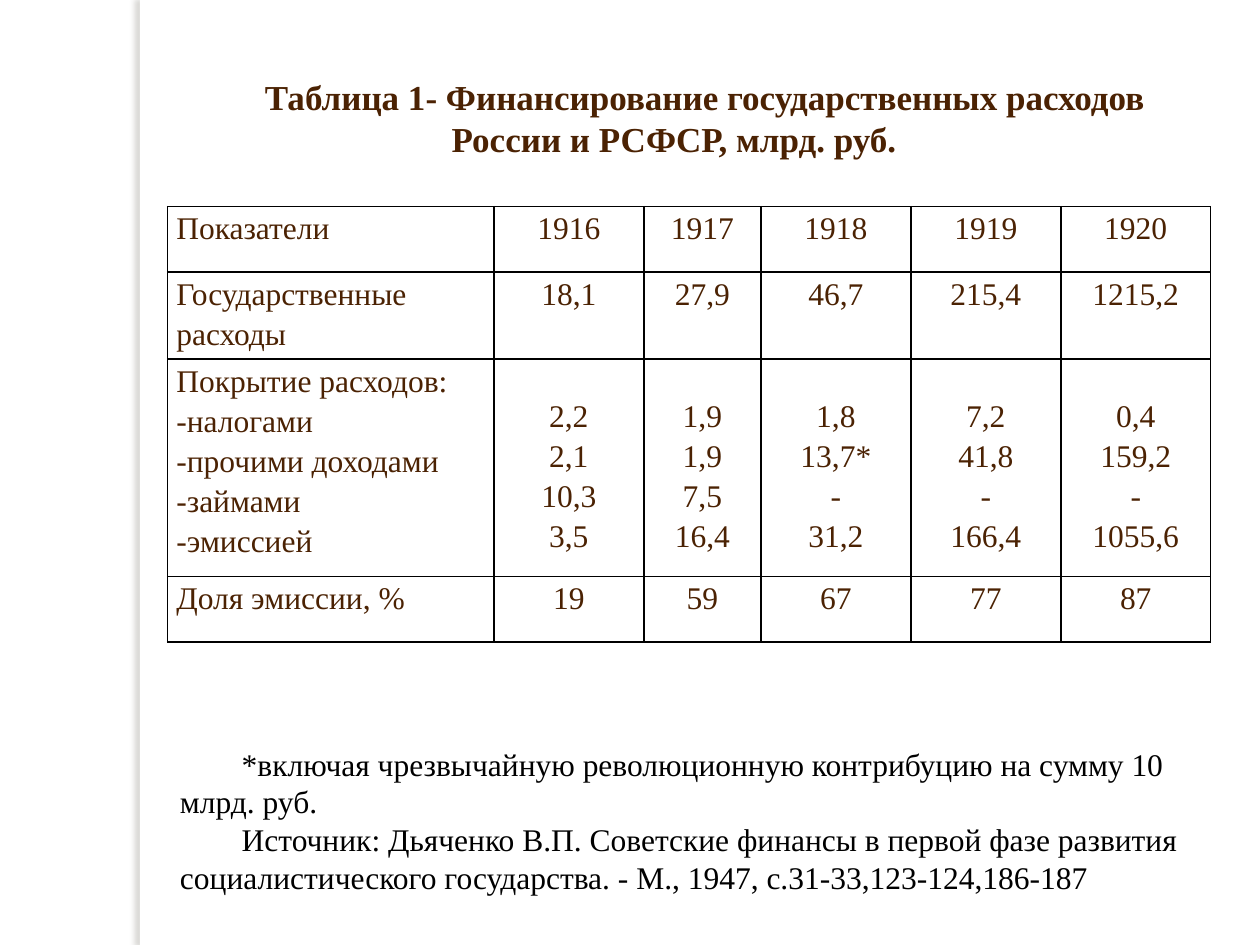
from lxml.etree import SubElement
from pptx import Presentation
from pptx.dml.color import RGBColor
from pptx.enum.shapes import MSO_SHAPE as Shape
from pptx.enum.text import MSO_ANCHOR as Anchor, MSO_AUTO_SIZE as AutoSize, PP_ALIGN as Align
from pptx.oxml import parse_xml
from pptx.oxml.ns import nsdecls, qn
from pptx.util import Inches, Pt

TITLE = "Таблица 1- Финансирование государственных расходов России и РСФСР, млрд. руб."
ROWS = [
    ["Показатели", "1916", "1917", "1918", "1919", "1920"],
    ["Государственные расходы", "18,1", "27,9", "46,7", "215,4", "1215,2"],
    [
        "Покрытие расходов:\n-налогами\n-прочими доходами\n-займами\n-эмиссией",
        "2,2\n2,1\n10,3\n3,5",
        "1,9\n1,9\n7,5\n16,4",
        "1,8\n13,7*\n-\n31,2",
        "7,2\n41,8\n-\n166,4",
        "0,4\n159,2\n-\n1055,6",
    ],
    ["Доля эмиссии, %", "19", "59", "67", "77", "87"],
]
NOTES = [
    "*включая чрезвычайную революционную контрибуцию на сумму 10 млрд. руб.",
    "Источник: Дьяченко В.П. Советские финансы в первой фазе развития "
    "социалистического государства. - М., 1947, с.31-33,123-124,186-187",
]
COLUMN_WIDTHS = [2.59, 1.19, 0.93, 1.19, 1.19, 1.19]
ROW_HEIGHTS = [0.52, 0.52, 1.63, 0.52]
COVERAGE_ROW = 2
FIRST_LINE_GAP = 0.28
FONT, BROWN, BLACK, WHITE = "Times New Roman", "4B2203", "000000", "FFFFFF"


def paint(fill, color):
    fill.solid()
    fill.fore_color.rgb = RGBColor.from_string(color)


def write(frame, lines, size, color, align=Align.LEFT, bold=False, spacing=None, indent=0):
    frame.text = "\n".join(lines)
    frame.word_wrap = True
    for para in frame.paragraphs:
        para.alignment = align
        para.line_spacing = spacing
        if indent:
            properties = para._p.get_or_add_pPr()
            properties.set("marL", "0")
            properties.set("indent", str(Inches(indent)))
        para.font.name = FONT
        para.font.size = Pt(size)
        para.font.bold = bold
        para.font.color.rgb = RGBColor.from_string(color)


def add_side_strip(page):
    strip = page.shapes.add_shape(Shape.RECTANGLE, Inches(1.11), 0, Inches(0.08), Inches(7.5))
    paint(strip.fill, WHITE)
    strip.line.fill.background()
    strip._element.spPr.append(parse_xml(
        f'<a:effectLst {nsdecls("a")}><a:outerShdw blurRad="{Pt(3)}" dist="{Pt(3)}" '
        'dir="10800000" rotWithShape="0"><a:srgbClr val="736F63"><a:alpha val="25000"/>'
        '</a:srgbClr></a:outerShdw></a:effectLst>'))


def add_borders(cell):
    properties = cell._tc.get_or_add_tcPr()
    for index, side in enumerate(("a:lnL", "a:lnR", "a:lnT", "a:lnB")):
        line = parse_xml(f'<{side} {nsdecls("a")} w="{Pt(1)}"/>')
        fill = SubElement(line, qn("a:solidFill"))
        SubElement(fill, qn("a:srgbClr"), val=BLACK)
        properties.insert(index, line)


def add_finance_table(page):
    frame = page.shapes.add_table(len(ROWS), len(COLUMN_WIDTHS), Inches(1.33), Inches(1.64),
                                  Inches(8.28), Inches(3.45))
    table = frame.table
    for column, width in zip(table.columns, COLUMN_WIDTHS):
        column.width = Inches(width)
    for row, height in zip(table.rows, ROW_HEIGHTS):
        row.height = Inches(height)
    for r, row in enumerate(ROWS):
        for c, text in enumerate(row):
            cell = table.cell(r, c)
            cell.margin_left = cell.margin_right = Inches(0.07)
            cell.margin_top = Inches(FIRST_LINE_GAP if r == COVERAGE_ROW and c else 0)
            cell.margin_bottom = 0
            paint(cell.fill, WHITE)
            add_borders(cell)
            write(cell.text_frame, text.split("\n"), 18, BROWN,
                  Align.CENTER if c else Align.LEFT, spacing=1.15)


def main():
    """Build the slide on financing of state expenditure."""
    deck = Presentation()
    deck.slide_width, deck.slide_height = Inches(10), Inches(7.5)
    page = deck.slides.add_slide(deck.slide_layouts[5])
    add_side_strip(page)
    add_finance_table(page)

    title = page.shapes.title
    title.left, title.top, title.width, title.height = map(Inches, (1.17, 0.55, 8.36, 0.77))
    write(title.text_frame, [TITLE], 20, BROWN, Align.CENTER, bold=True, indent=0.49)
    title.text_frame.vertical_anchor = Anchor.MIDDLE
    title.text_frame.auto_size = AutoSize.SHAPE_TO_FIT_TEXT

    notes = page.shapes.add_textbox(*map(Inches, (1.33, 5.86, 8.28, 1.31)))
    write(notes.text_frame, NOTES, 18, BLACK, indent=0.49)
    notes.text_frame.auto_size = AutoSize.SHAPE_TO_FIT_TEXT

    deck.save("out.pptx")


if __name__ == "__main__":
    main()
